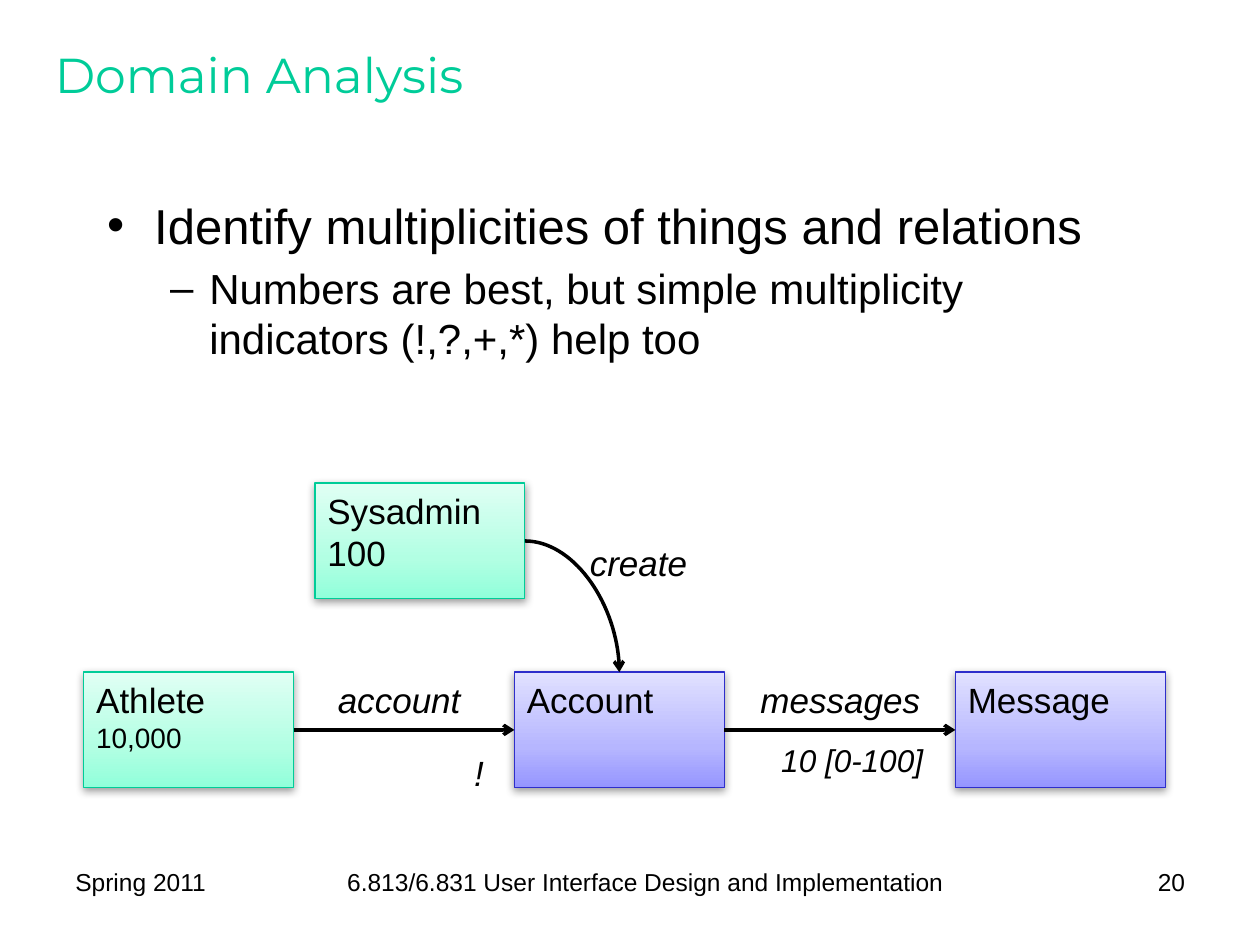
from typing import NamedTuple

from pptx import Presentation
from pptx.dml.color import RGBColor as RGB
from pptx.enum.shapes import MSO_CONNECTOR as Link, MSO_SHAPE as Shape
from pptx.enum.text import MSO_ANCHOR as Anchor, PP_ALIGN as Align
from pptx.oxml import parse_xml
from pptx.oxml.ns import nsdecls, qn
from pptx.util import Cm, Pt

HUES = {"ink": "000000", "title": "00CC99", "user": "00CC98", "data": "2E2ECB"}
FADES = {
    "user": ("90FFDA", "B2FFE3", "E0FFF4"),
    "data": ("9595FF", "B6B6FF", "E1E1FF"),
}
STOPS = (0, 35000, 100000)
BOX_W, BOX_H = 4.23, 2.33
ROW = 13.55  # top of the lower row of boxes


class Line(NamedTuple):
    text: str
    size: float = 20
    italic: bool = False
    align: Align = Align.LEFT


class Box(NamedTuple):
    left: float
    top: float
    kind: str
    lines: tuple[Line, ...]


class Note(NamedTuple):
    left: float
    top: float
    width: float
    height: float
    line: Line
    wrap: bool = False


class Point(NamedTuple):
    mark: str
    left: float
    hang: float
    gap: float
    line: Line


def style(para, line: Line, hue: str = "ink", face: str = "Arial") -> None:
    para.text = line.text
    para.alignment = line.align
    font = para.font
    font.name, font.size, font.italic = face, Pt(line.size), line.italic
    font.color.rgb = RGB.from_string(HUES[hue])


def add_para(frame, first: bool):
    return frame.paragraphs[0] if first else frame.add_paragraph()


def add_note(slide, note: Note) -> None:
    area = map(Cm, (note.left, note.top, note.width, note.height))
    frame = slide.shapes.add_textbox(*area).text_frame
    frame.word_wrap = note.wrap
    style(frame.paragraphs[0], note.line)


def add_points(slide, points: tuple[Point, ...]) -> None:
    frame = slide.shapes.add_textbox(Cm(1.91), Cm(3.81), Cm(21.59), Cm(13.13)).text_frame
    frame.word_wrap = True
    for i, point in enumerate(points):
        para = add_para(frame, i == 0)
        para.space_before = Pt(point.gap)
        props = para._p.get_or_add_pPr()
        props.set("marL", str(Cm(point.left)))
        props.set("indent", str(-Cm(point.hang)))
        props.append(parse_xml(f'<a:buFont {nsdecls("a")} typeface="Arial"/>'))
        props.append(parse_xml(f'<a:buChar {nsdecls("a")} char="{point.mark}"/>'))
        style(para, point.line)


def add_box(slide, box: Box) -> None:
    area = map(Cm, (box.left, box.top, BOX_W, BOX_H))
    shape = slide.shapes.add_shape(Shape.RECTANGLE, *area)
    shape.line.color.rgb = RGB.from_string(HUES[box.kind])
    shape.line.width = Pt(0.75)

    # Gradient from bottom to top, and a soft shadow below
    stops = "".join(
        f'<a:gs pos="{pos}"><a:srgbClr val="{hue}"/></a:gs>'
        for pos, hue in zip(STOPS, FADES[box.kind])
    )
    props = shape._element.spPr
    props.find(qn("a:prstGeom")).addnext(parse_xml(
        f'<a:gradFill {nsdecls("a")} rotWithShape="1"><a:gsLst>{stops}</a:gsLst>'
        '<a:lin ang="16200000" scaled="0"/></a:gradFill>'))
    props.append(parse_xml(
        f'<a:effectLst {nsdecls("a")}><a:outerShdw blurRad="{Pt(5)}" '
        f'dist="{Pt(1.6)}" dir="5400000" rotWithShape="0"><a:srgbClr val="000000">'
        '<a:alpha val="38000"/></a:srgbClr></a:outerShdw></a:effectLst>'))

    frame = shape.text_frame
    frame.word_wrap = False
    frame.vertical_anchor = Anchor.TOP
    for i, line in enumerate(box.lines):
        style(add_para(frame, i == 0), line)


def add_arrow(slide, start: tuple[float, float], end: tuple[float, float]) -> None:
    link = slide.shapes.add_connector(Link.CURVE, *map(Cm, (*start, *end)))
    link.line.color.rgb = RGB.from_string(HUES["ink"])
    link.line.width = Pt(2)
    props = link._element.spPr
    if start[1] != end[1]:  # a quarter turn into the box below
        props.find(qn("a:prstGeom")).set("prst", "curvedConnector2")
    props.find(qn("a:ln")).append(parse_xml(f'<a:tailEnd {nsdecls("a")} type="arrow"/>'))
    props.append(parse_xml(f'<a:effectLst {nsdecls("a")}/>'))


ATHLETE = Box(1.69, ROW, "user", (Line("Athlete"), Line("10,000", 16)))
ADMIN = Box(6.35, 9.74, "user", (Line("Sysadmin"), Line("100")))
ACCOUNT = Box(10.37, ROW, "data", (Line("Account"),))
MESSAGE = Box(19.26, ROW, "data", (Line("Message"),))

POINTS = (
    Point("•", 0.95, 0.95, 5.6, Line("Identify multiplicities of things and relations", 28)),
    Point("–", 2.06, 0.79, 4.8, Line(
        "Numbers are best, but simple multiplicity indicators (!,?,+,*) help too", 24)),
)
FOOT = (
    Note(1.27, 17.36, 3.81, 1.32, Line("Spring 2011", 14), True),
    Note(5.29, 17.36, 15.45, 1.32, Line(
        "6.813/6.831 User Interface Design and Implementation", 14, align=Align.CENTER), True),
    Note(20.96, 17.36, 3.18, 1.32, Line("20", 14, align=Align.RIGHT), True),
)
LABELS = (
    Note(11.64, 10.8, 2.49, 1.11, Line("create", italic=True)),
    Note(6.56, ROW, 3, 1.11, Line("account", italic=True)),
    Note(15.08, ROW, 3.76, 1.11, Line("messages", italic=True)),
    Note(9.31, 15.03, 0.71, 1.11, Line("!", italic=True)),
    Note(15.5, 14.82, 3.4, 1.03, Line("10 [0-100]", 18, True)),
)


def right(box: Box) -> tuple[float, float]:
    return box.left + BOX_W, box.top + BOX_H / 2


def left(box: Box) -> tuple[float, float]:
    return box.left, box.top + BOX_H / 2


def main() -> None:
    deck = Presentation()
    deck.slide_width, deck.slide_height = Cm(25.4), Cm(19.05)
    slide = deck.slides.add_slide(deck.slide_layouts[5])

    # Title and bullets
    title = slide.shapes.title
    title.left, title.top, title.width, title.height = map(Cm, (0.85, 0.42, 23.5, 2.12))
    title.text_frame.vertical_anchor = Anchor.MIDDLE
    style(title.text_frame.paragraphs[0], Line("Domain Analysis", 28), "title", "Montserrat")
    add_points(slide, POINTS)

    # Footer
    for note in FOOT:
        add_note(slide, note)

    # Diagram
    for box in (ATHLETE, ADMIN, ACCOUNT, MESSAGE):
        add_box(slide, box)
    add_arrow(slide, right(ATHLETE), left(ACCOUNT))
    add_arrow(slide, right(ACCOUNT), left(MESSAGE))
    add_arrow(slide, right(ADMIN), (ACCOUNT.left + BOX_W / 2, ACCOUNT.top))
    for note in LABELS:
        add_note(slide, note)

    deck.save("out.pptx")


if __name__ == "__main__":
    main()
